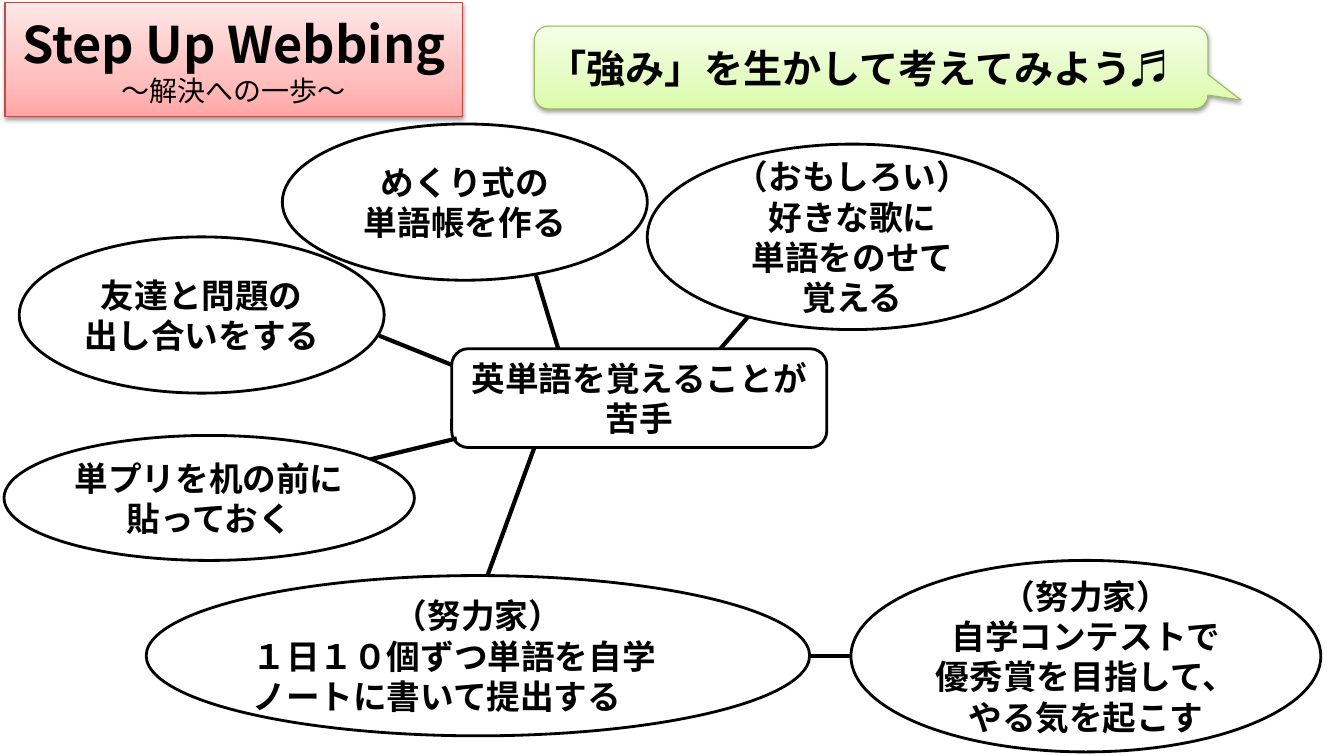
from copy import deepcopy

from lxml import etree
from pptx import Presentation
from pptx import util as u
from pptx.dml.color import RGBColor
from pptx.enum import shapes, text
from pptx.oxml.ns import qn

SHAPE = shapes.MSO_SHAPE
CENTER, LEFT = text.PP_ALIGN.CENTER, text.PP_ALIGN.LEFT


def rgb(value):
    return RGBColor.from_string(value)


class Webbing:
    font = "Noto Sans CJK JP"
    ink, paper = "000000", "FFFFFF"
    inset = u.Inches(0.09)

    def __init__(self, slide):
        self.s = slide

    def line(self, x1, y1, x2, y2):
        c = self.s.shapes.add_connector(
            shapes.MSO_CONNECTOR.STRAIGHT, *map(u.Inches, (x1, y1, x2, y2)))
        c.line.color.rgb = rgb(self.ink)
        c.line.width = u.Pt(3)
        etree.SubElement(c._element.spPr, qn("a:effectLst"))

    def shape(self, kind, box, paras, line=ink, width=2):
        """Each paragraph is (text, alignment, size, bold)."""
        sp = self.s.shapes.add_shape(kind, *map(u.Inches, box))
        sp.shadow.inherit = False
        sp.fill.solid()
        sp.fill.fore_color.rgb = rgb(self.paper)
        sp.line.color.rgb = rgb(line)
        sp.line.width = u.Pt(width)
        tf = sp.text_frame
        frame = {"word_wrap": True, "vertical_anchor": text.MSO_ANCHOR.MIDDLE,
                 "margin_left": self.inset, "margin_right": self.inset}
        for name, value in frame.items():
            setattr(tf, name, value)
        for i, (words, align, size, bold) in enumerate(paras):
            p = tf.paragraphs[0] if i == 0 else tf.add_paragraph()
            p.alignment = align
            r = p.add_run()
            r.text = words
            for name, value in {"name": self.font, "size": u.Pt(size), "bold": bold}.items():
                setattr(r.font, name, value)
            r.font.color.rgb = rgb(self.ink)
            etree.SubElement(r._r.get_or_add_rPr(), qn("a:ea"), typeface=self.font)
        return sp

    def bubble(self, kind, box, lines, aligns=None):
        aligns = aligns or [CENTER] * len(lines)
        return self.shape(kind, box, [(t, a, 24, True) for t, a in zip(lines, aligns)])

    def banner(self, kind, box, paras, line, colors):
        sp = self.shape(kind, box, paras, line, 0.75)
        # Three-stop gradient, dark at the bottom
        sp.fill.gradient()
        sp.fill.gradient_angle = 90
        stops = sp._element.spPr.find(".//" + qn("a:gsLst"))
        stops.append(deepcopy(stops[0]))
        for stop, color, pos in zip(sp.fill.gradient_stops, colors, (0, 0.35, 1)):
            stop.color.rgb = rgb(color)
            stop.position = pos
        # Soft shadow below
        effects = sp._element.spPr.find(qn("a:effectLst"))
        shadow = etree.SubElement(effects, qn("a:outerShdw"), blurRad="40000",
                                  dist="20000", dir="5400000", rotWithShape="0")
        color = etree.SubElement(shadow, qn("a:srgbClr"), val=self.ink)
        etree.SubElement(color, qn("a:alpha"), val="38000")
        return sp


# Ideas and the central problem: outline, box, lines, alignments, link
BUBBLES = [
    (SHAPE.OVAL, (2.8, 1.23, 3.62, 1.55), ["めくり式の", "単語帳を作る"],
     None, (5.3, 2.68, 5.57, 3.57)),
    (SHAPE.OVAL, (6.42, 1.43, 4.07, 1.84),
     ["（おもしろい）", "好きな歌に", "単語をのせて", "覚える"],
     None, (7.43, 3.13, 7.05, 3.57)),
    (SHAPE.OVAL, (8.44, 5.56, 4.66, 1.9),
     ["（努力家）", "自学コンテストで", "優秀賞を目指して、やる気を起こす"],
     None, (8.44, 6.51, 8.03, 6.51)),
    (SHAPE.OVAL, (0.19, 2.35, 3.62, 1.55), ["友達と問題の", "出し合いをする"],
     None, (3.76, 3.33, 4.48, 3.62)),
    (SHAPE.ROUNDED_RECTANGLE, (4.48, 3.46, 3.72, 0.98), ["英単語を覚えることが苦手"],
     None, None),
    (SHAPE.OVAL, (0.04, 4.32, 4.07, 1.24), ["単プリを机の前に貼っておく"],
     None, (4.53, 4.35, 3, 4.72)),
    (SHAPE.OVAL, (1.45, 5.71, 6.58, 1.59),
     ["（努力家）", "１日１０個ずつ単語を自学ノートに書いて提出する"],
     [CENTER, LEFT], (4.74, 5.97, 5.3, 4.44)),
]


def main():
    prs = Presentation()
    prs.slide_width, prs.slide_height = u.Inches(13.33), u.Inches(7.5)
    web = Webbing(prs.slides.add_slide(prs.slide_layouts[6]))

    # Web of ideas, each link behind its bubble
    for kind, box, lines, aligns, link in BUBBLES:
        if link:
            web.line(*link)
        web.bubble(kind, box, lines, aligns)

    # Speech balloon
    balloon = web.banner(
        SHAPE.ROUNDED_RECTANGULAR_CALLOUT, (5.3, 0.26, 6.68, 0.82),
        [("「強み」を生かして考えてみよう♬", LEFT, 28, True)],
        "98B955", ("DAFDA7", "E4FCC2", "F5FFE7"))
    for i, value in enumerate((0.549, 0.393, 0.167)):
        balloon.adjustments[i] = value

    # Title
    web.banner(
        SHAPE.RECTANGLE, (0.05, 0.03, 4.54, 1.13),
        [("Step Up Webbing", CENTER, 36, True), ("～解決への一歩～", CENTER, 20, False)],
        "BF4C48", ("FFA6A5", "FFC0BF", "FFE7E7"))

    prs.save("out.pptx")


if __name__ == "__main__":
    main()
